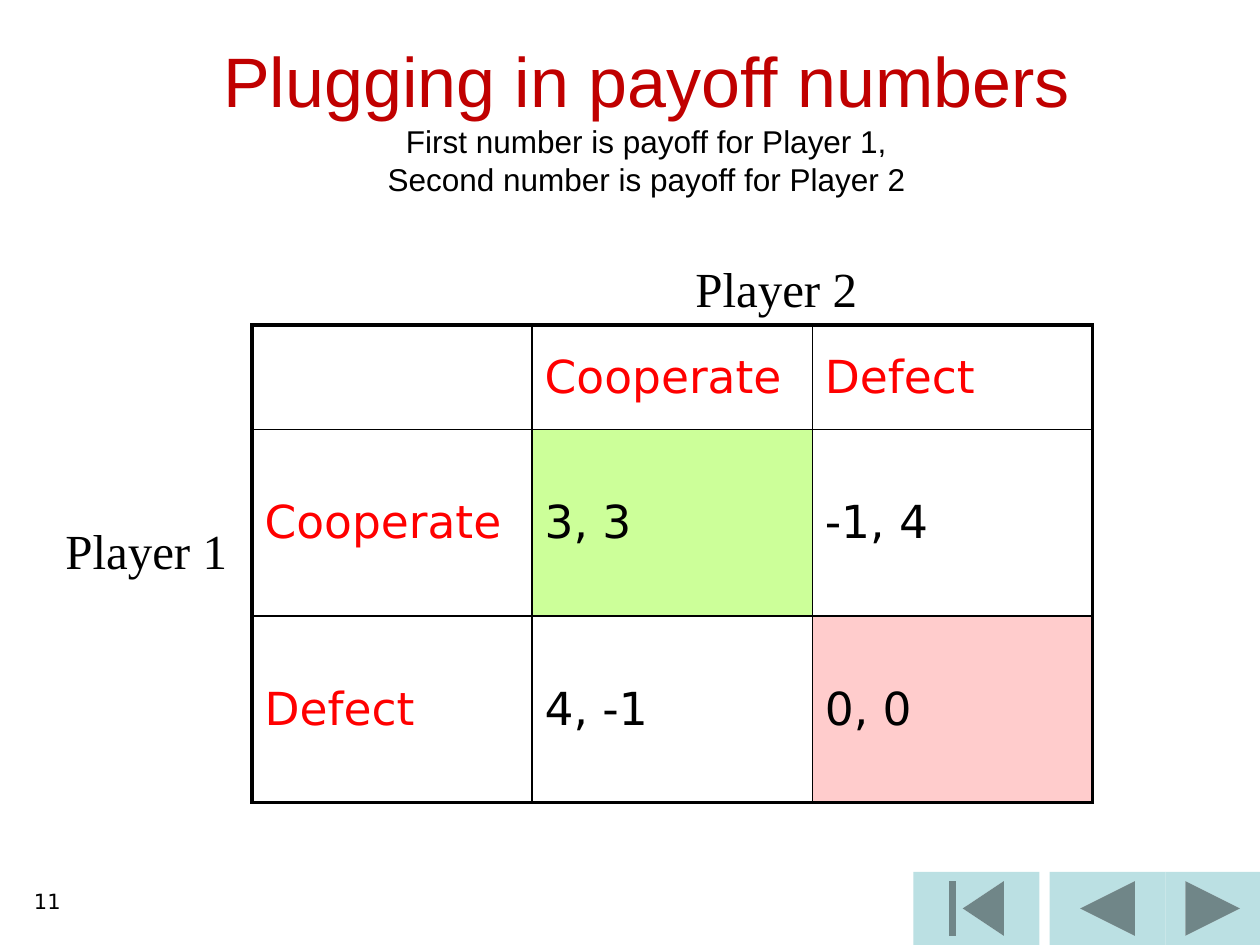
from lxml import etree
from pptx import Presentation
from pptx.dml.color import RGBColor
from pptx.enum import shapes, text
from pptx.oxml import ns
from pptx.util import Inches, Pt

BLACK = RGBColor(0x00, 0x00, 0x00)
RED = RGBColor(0xFF, 0x00, 0x00)
DARK_RED = RGBColor(0xC0, 0x00, 0x00)
GREEN = RGBColor(0xCC, 0xFF, 0x99)
PINK = RGBColor(0xFF, 0xCC, 0xCC)
TEAL = RGBColor(0xBB, 0xE0, 0xE3)

# Content
TITLE_LINES = [
    ("Plugging in payoff numbers", 40, DARK_RED),
    ("First number is payoff for Player 1,", 18, BLACK),
    ("Second number is payoff for Player 2", 18, BLACK),
]
PAYOFFS = [
    ["", "Cooperate", "Defect"],
    ["Cooperate", "3, 3", "-1, 4"],
    ["Defect", "4, -1", "0, 0"],
]
CELL_FILLS = {(1, 1): GREEN, (2, 2): PINK}
ROW_HEIGHTS = [0.83, 1.48, 1.48]
TABLE_LEFT, TABLE_TOP, TABLE_WIDTH = 2, 2.58, 6.67
PLAYER_LABELS = [
    ("Player 2", 5.42, 2, 1.72),
    ("Player 1", 0.42, 4.08, 1.49),
]
BUTTONS = [  # shape, left, width
    (shapes.MSO_SHAPE.ACTION_BUTTON_BACK_OR_PREVIOUS, 8.33, 0.92),
    (shapes.MSO_SHAPE.ACTION_BUTTON_BEGINNING, 7.25, 1),
    (shapes.MSO_SHAPE.ACTION_BUTTON_FORWARD_OR_NEXT, 9.25, 0.75),
]
BUTTON_TOP, BUTTON_HEIGHT = 6.92, 0.58


def add_run(paragraph, words, size, font, color):
    run = paragraph.add_run()
    run.text = words
    run.font.size = Pt(size)
    run.font.name = font
    run.font.bold = False
    run.font.color.rgb = color


def add_text_box(slide, left, top, width, height, alignment=text.PP_ALIGN.LEFT):
    box = slide.shapes.add_textbox(*map(Inches, (left, top, width, height)))
    box.text_frame.word_wrap = True
    paragraph = box.text_frame.paragraphs[0]
    paragraph.alignment = alignment
    return box.text_frame, paragraph


def set_borders(cell, widths):
    properties = cell._tc.get_or_add_tcPr()
    for index, (side, width) in enumerate(widths.items()):
        line = etree.Element(ns.qn("a:ln" + side), w=str(Pt(width)))
        fill = etree.SubElement(line, ns.qn("a:solidFill"))
        etree.SubElement(fill, ns.qn("a:srgbClr"), val=str(BLACK))
        properties.insert(index, line)


def add_payoff_table(slide):
    count = len(PAYOFFS)
    frame = slide.shapes.add_table(
        count, count, Inches(TABLE_LEFT), Inches(TABLE_TOP),
        Inches(TABLE_WIDTH), Inches(sum(ROW_HEIGHTS)))
    table = frame.table
    table.first_row = table.horz_banding = False
    for column in table.columns:
        column.width = Inches(TABLE_WIDTH / count)
    last = count - 1
    for i, values in enumerate(PAYOFFS):
        table.rows[i].height = Inches(ROW_HEIGHTS[i])
        for j, value in enumerate(values):
            cell = table.cell(i, j)
            cell.vertical_anchor = text.MSO_ANCHOR.MIDDLE
            if (i, j) in CELL_FILLS:
                cell.fill.solid()
                cell.fill.fore_color.rgb = CELL_FILLS[i, j]
            else:
                cell.fill.background()
            if value:
                color = BLACK if i and j else RED
                add_run(cell.text_frame.paragraphs[0], value, 26, "DejaVu Sans", color)
            # Thick outer frame, thin inner lines
            outer = {"L": j == 0, "R": j == last, "T": i == 0, "B": i == last}
            set_borders(cell, {side: 2.25 if edge else 1 for side, edge in outer.items()})


def main():
    presentation = Presentation()
    presentation.slide_width = Inches(10)
    presentation.slide_height = Inches(7.5)
    slide = presentation.slides.add_slide(presentation.slide_layouts[6])

    # Navigation buttons
    for kind, left, width in BUTTONS:
        shape = slide.shapes.add_shape(
            kind, Inches(left), Inches(BUTTON_TOP), Inches(width), Inches(BUTTON_HEIGHT))
        shape.shadow.inherit = False
        shape.fill.solid()
        shape.fill.fore_color.rgb = TEAL
        shape.line.fill.background()

    # Page number
    _, paragraph = add_text_box(slide, 0, 7, 0.58, 0.5, text.PP_ALIGN.RIGHT)
    add_run(paragraph, "11", 12, "DejaVu Sans", BLACK)

    # Title
    frame, paragraph = add_text_box(slide, 0.92, 0.1, 8.42, 1.67, text.PP_ALIGN.CENTER)
    frame.vertical_anchor = text.MSO_ANCHOR.MIDDLE
    for index, (words, size, color) in enumerate(TITLE_LINES):
        if index:
            paragraph.add_line_break()
        add_run(paragraph, words, size, "Arial", color)

    # Payoff matrix and player labels
    add_payoff_table(slide)
    for words, left, top, width in PLAYER_LABELS:
        _, paragraph = add_text_box(slide, left, top, width, 0.57)
        add_run(paragraph, words, 28, "Times New Roman", BLACK)

    presentation.save("out.pptx")


if __name__ == "__main__":
    main()
